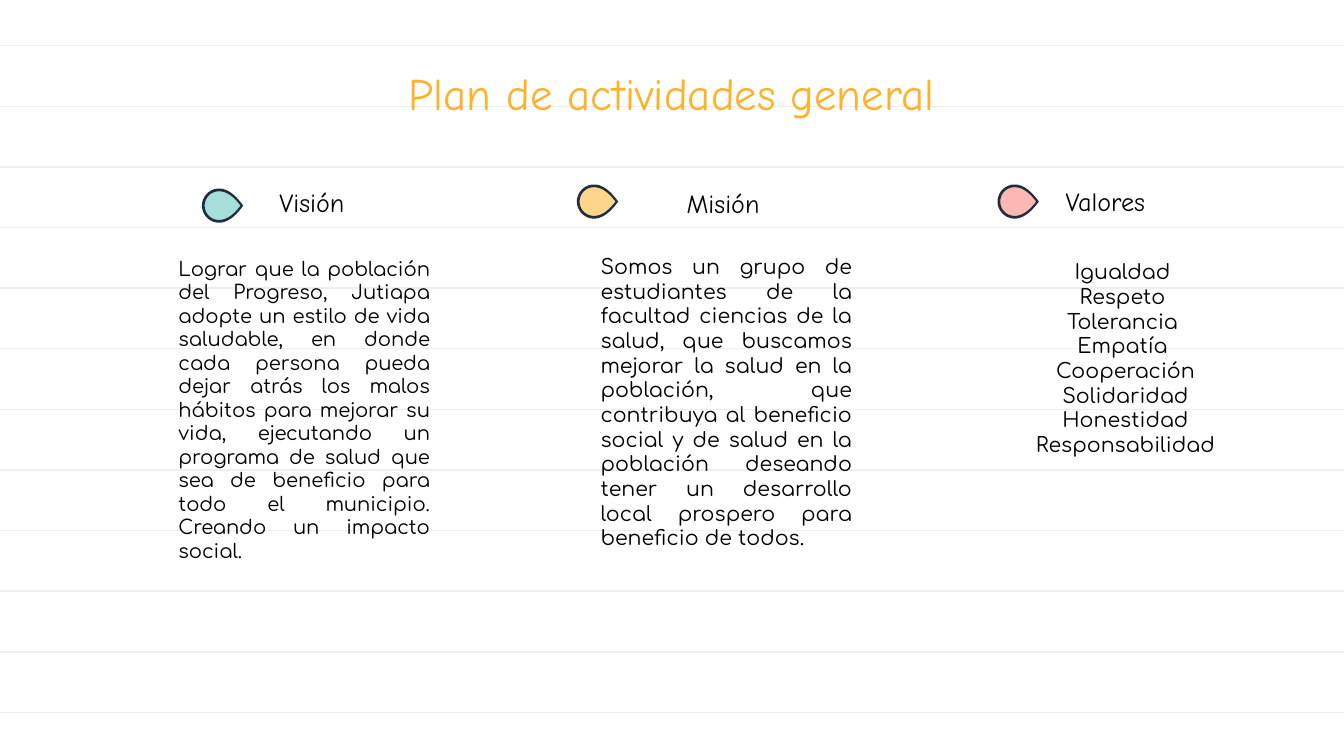
from dataclasses import dataclass
from math import cos, pi, sin, sqrt

from lxml.etree import SubElement
from pptx import Presentation
from pptx.dml.color import RGBColor as RGB
from pptx.enum.shapes import MSO_CONNECTOR as Link
from pptx.enum.text import MSO_ANCHOR as Anchor, PP_ALIGN as Align
from pptx.oxml.ns import qn
from pptx.util import Inches, Pt


@dataclass(frozen=True)
class Theme:
    rule: RGB = RGB(0xEE, 0xEE, 0xEE)
    title: RGB = RGB(0xFD, 0xB2, 0x29)
    text: RGB = RGB(0, 0, 0)
    ink: RGB = RGB(0x21, 0x2E, 0x40)
    teal: RGB = RGB(0xA6, 0xDF, 0xDA)
    gold: RGB = RGB(0xFE, 0xD5, 0x8A)
    pink: RGB = RGB(0xFE, 0xB8, 0xB3)
    head_font: str = "Comic Neue"
    body_font: str = "Comfortaa"
    title_size: float = 24
    head_size: float = 14
    body_size: float = 11
    small_size: float = 10.5


theme = Theme()
deck = Presentation()
deck.slide_width = Inches(10)
deck.slide_height = deck.slide_width * 9 // 16
slide = deck.slides.add_slide(deck.slide_layouts[6])
shapes = slide.shapes


def add_text(box, lines, font, size, color=theme.text,
             align=Align.LEFT, anchor=Anchor.TOP):
    frame = shapes.add_textbox(*map(Inches, box)).text_frame
    frame.word_wrap = True
    frame.vertical_anchor = anchor
    frame.margin_left = frame.margin_right = Inches(0.1)
    frame.margin_top = frame.margin_bottom = Inches(0.1)
    frame.text = "\n".join(lines)
    for para in frame.paragraphs:
        para.alignment = align
        para.font.name, para.font.size = font, Pt(size)
        para.font.color.rgb = color


def add_drop(x, y, color, *grows):
    """Fill a drop pointing right; a second grow cuts a hole in it."""
    loops = []
    for grow in grows:
        radius, tip = 0.117 + grow, 0.17 + grow
        loop = []
        for step in range(48):
            turn = 2 * pi * step / 48
            across = cos(turn) * radius
            if across > 0:
                across = tip * sqrt(1 - abs(sin(turn)))
            loop.append((Inches(x + across), Inches(y + radius * sin(turn))))
        loops.append(loop)
    pen = shapes.build_freeform(*loops[0][0])
    pen.add_line_segments(loops[0][1:])
    for loop in loops[1:]:
        pen.move_to(*loop[0])
        pen.add_line_segments(loop[1:])
    drop = pen.convert_to_shape()
    drop.shadow.inherit = False
    drop.fill.solid()
    drop.fill.fore_color.rgb = color
    drop.line.fill.background()


# Ruled paper
for row in range(12):
    y = Inches(0.34 + 0.451 * row)
    rule = shapes.add_connector(Link.STRAIGHT, 0, y, Inches(10.03), y)
    rule.line.color.rgb = theme.rule
    rule.line.width = Pt(0.75)
    SubElement(rule._element.spPr, qn("a:effectLst"))

vision = ["Lograr que la población del Progreso, Jutiapa adopte un estilo de "
          "vida saludable, en donde cada persona pueda dejar atrás los malos "
          "hábitos para mejorar su vida, ejecutando un programa de salud que "
          "sea de beneficio para todo el municipio. Creando un impacto social."]
mission = ["Somos un grupo de estudiantes de la facultad ciencias de la salud, "
           "que buscamos mejorar la salud en la población, que contribuya al "
           "beneficio social y de salud en la población deseando tener un "
           "desarrollo local prospero para beneficio de todos."]
values = ["Igualdad ", "Respeto ", "Tolerancia ", "Empatía ",
          "Cooperación Solidaridad Honestidad Responsabilidad"]

# Heading, its box, body, body left and top, size, alignment, drop centre, fill
columns = [
    ("Visión", (1.98, 1.31, 1.18, 0.41), vision, 1.23, 1.81,
     theme.small_size, Align.JUSTIFY, (1.63, 1.53), theme.teal),
    ("Misión", (5.01, 1.08, 0.91, 0.65), mission, 4.37, 1.79,
     theme.body_size, Align.JUSTIFY, (4.42, 1.5), theme.gold),
    ("Valores", (7.83, 1.06, 1.1, 0.65), values, 7.34, 1.83,
     theme.body_size, Align.CENTER, (7.55, 1.5), theme.pink),
]
for head, box, body, left, top, size, align, spot, color in columns:
    add_text((left, top, 2.07, 0.51), body, theme.body_font, size, align=align)
    add_text(box, [head], theme.head_font, theme.head_size,
             anchor=Anchor.BOTTOM)

add_text((1.01, 0.19, 7.97, 0.8), ["Plan de actividades general"],
         theme.head_font, theme.title_size, theme.title,
         Align.CENTER, Anchor.BOTTOM)

for *_, spot, color in columns:
    add_drop(*spot, color, 0)
    add_drop(*spot, theme.ink, 0.01, -0.01)

deck.save("out.pptx")
